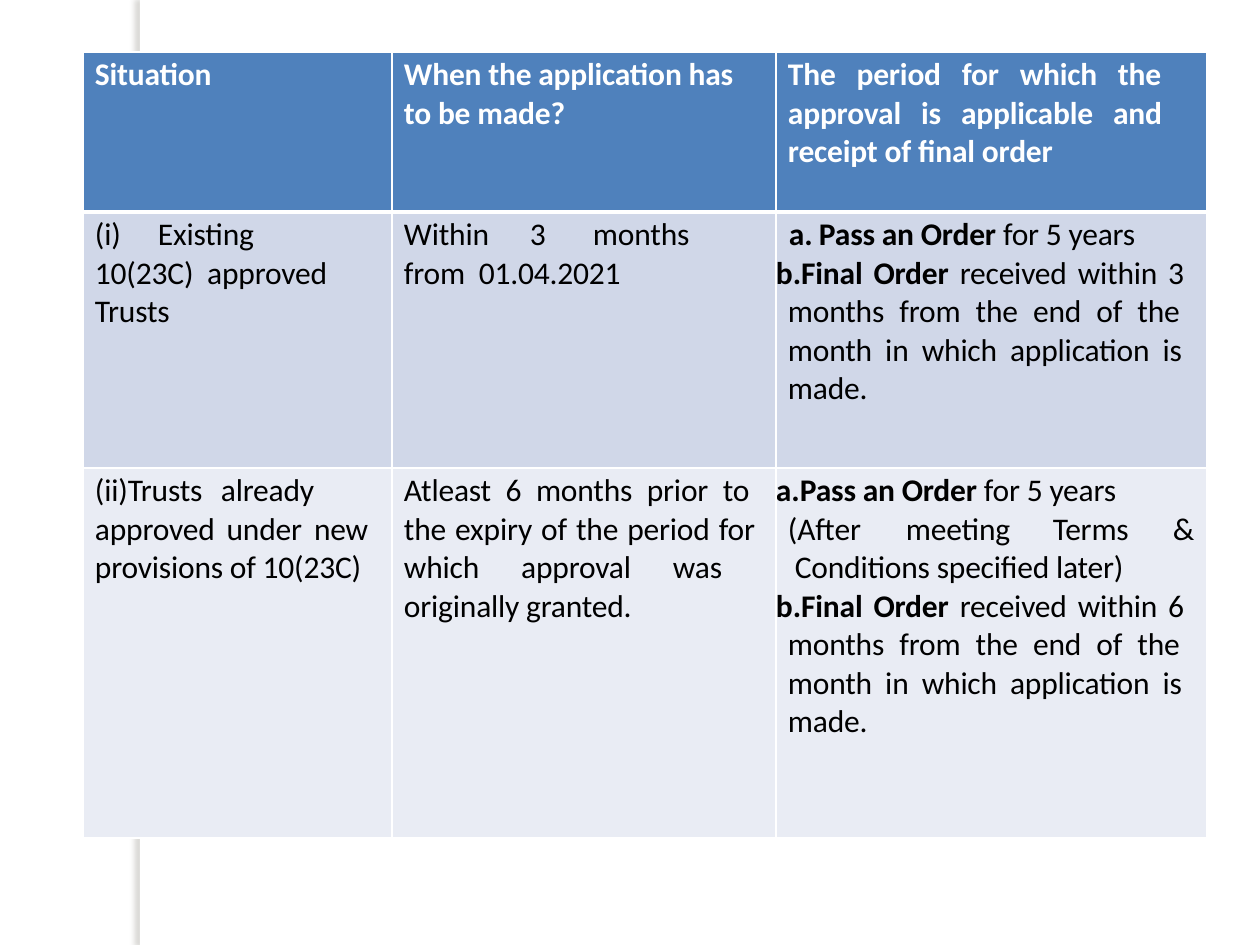
from dataclasses import dataclass

from lxml import etree
from pptx import Presentation
from pptx import util as u
from pptx.dml.color import RGBColor
from pptx.enum import shapes, text
from pptx.oxml import ns

EMU_PER_PX = 914400 / 126


def px(length):
    return u.Emu(round(length * EMU_PER_PX))


@dataclass(frozen=True)
class Theme:
    font: str = "Calibri"
    size: int = 18
    tracking: int = -10
    white: str = "FFFFFF"
    ink: str = "000000"
    shadow: str = "736F63"
    row_fills: tuple = ("4F81BC", "D0D7E8", "E9ECF4")
    thin: int = 1
    thick: int = 3


@dataclass(frozen=True)
class Line:
    """One cell paragraph; runs are (wording, bold), lengths are px."""
    runs: tuple
    justified: bool = False
    number: int = 0
    left: int = 12
    hang: int = 0
    right: int = 12
    tabs: tuple = ()


def child(parent, tag, **attributes):
    element = etree.SubElement(parent, ns.qn(tag))
    for name, value in attributes.items():
        element.set(name, str(value))
    return element


class SlideBuilder:
    def __init__(self, presentation, theme):
        self.theme = theme
        self.slide = presentation.slides.add_slide(presentation.slide_layouts[6])

    def band(self, left, top, width, height):
        """Add a white strip that casts a soft shadow to its left."""
        shape = self.slide.shapes.add_shape(
            shapes.MSO_SHAPE.RECTANGLE, px(left), px(top), px(width), px(height))
        shape.fill.solid()
        shape.fill.fore_color.rgb = RGBColor.from_string(self.theme.white)
        shape.line.fill.background()
        shape.shadow.inherit = False
        effects = shape._element.spPr.find(ns.qn("a:effectLst"))
        shadow = child(effects, "a:outerShdw", blurRad=u.Pt(3), dist=u.Pt(3),
                       dir=180 * 60000, algn="tl", rotWithShape=0)
        color = child(shadow, "a:srgbClr", val=self.theme.shadow)
        child(color, "a:alpha", val=25000)

    def table(self, left, top, columns, rows, content):
        frame = self.slide.shapes.add_table(
            len(rows), len(columns), px(left), px(top), px(sum(columns)), px(sum(rows)))
        table = frame.table
        table.first_row = table.horz_banding = False
        for column, width in zip(table.columns, columns):
            column.width = px(width)
        for index, (row, height) in enumerate(zip(table.rows, rows)):
            row.height = px(height)
            for cell, lines in zip(row.cells, content[index]):
                self.cell(cell, index, lines)

    def cell(self, cell, row, lines):
        theme = self.theme
        cell.margin_left = cell.margin_right = cell.margin_bottom = 0
        cell.margin_top = px(4)
        cell.fill.solid()
        cell.fill.fore_color.rgb = RGBColor.from_string(theme.row_fills[row])
        self.borders(cell, top=theme.thick if row == 1 else theme.thin,
                     bottom=theme.thick if row == 0 else theme.thin)
        frame = cell.text_frame
        for index, line in enumerate(lines):
            paragraph = frame.add_paragraph() if index else frame.paragraphs[0]
            paragraph.space_before = u.Pt(0 if index else 2.4)
            self.line(paragraph, line, theme.ink if row else theme.white)

    def borders(self, cell, top, bottom):
        properties = cell._tc.get_or_add_tcPr()
        edges = (("a:lnL", self.theme.thin), ("a:lnR", self.theme.thin),
                 ("a:lnT", top), ("a:lnB", bottom))
        for position, (tag, width) in enumerate(edges):
            border = child(properties, tag, w=u.Pt(width))
            child(child(border, "a:solidFill"), "a:srgbClr", val=self.theme.white)
            properties.insert(position, border)

    def line(self, paragraph, line, color):
        paragraph.alignment = (
            text.PP_ALIGN.JUSTIFY if line.justified else text.PP_ALIGN.LEFT)
        properties = paragraph._p.get_or_add_pPr()
        properties.set("marL", str(px(line.left)))
        properties.set("marR", str(px(line.right)))
        properties.set("indent", str(px(-line.hang)))
        if line.number:
            child(properties, "a:buAutoNum", type="alphaLcPeriod", startAt=line.number)
        else:
            child(properties, "a:buNone")
        if line.tabs:
            stops = child(properties, "a:tabLst")
            for stop in line.tabs:
                child(stops, "a:tab", pos=px(stop), algn="l")
        for wording, bold in line.runs:
            run = paragraph.add_run()
            run.text = wording
            run.font.name = self.theme.font
            run.font.size = u.Pt(self.theme.size)
            run.font.bold = bold
            run.font.color.rgb = RGBColor.from_string(color)
            run._r.get_or_add_rPr().set("spc", str(self.theme.tracking))


def heading(wording, **options):
    return Line(((wording, True),), **options)


def body(wording, **options):
    return Line(((wording, False),), **options)


def final_order(months):
    return Line((("Final Order ", True),
                 (f"received within {months}  months from the end of the  "
                  "month in which application is  made.", False)),
                justified=True, number=2, hang=12, tabs=(44,))


def pass_order(wording, **options):
    return Line((("Pass an Order ", True), (wording, False)), number=1, **options)


CONTENT = (
    ([heading("Situation")],
     [heading("When the application has"), heading("to be made?")],
     [heading("The period for which the  approval is applicable and  "
              "receipt of final order", justified=True, right=25)]),
    ([body("(i)\tExisting\t10(23C)  approved Trusts", tabs=(69, 197))],
     [body("Within\t3\tmonths\tfrom  01.04.2021", tabs=(131, 179, 310))],
     [pass_order("for 5 years", justified=True, left=43, hang=30, tabs=(43,)),
      final_order(3)]),
    ([body("(ii)Trusts\talready  approved under new  provisions of 10(23C)",
           justified=True, tabs=(202,))],
     [body("Atleast 6 months prior to  the expiry of the period for  "
           "which approval was  originally granted.", justified=True)],
     [pass_order("for 5 years  (After\tmeeting\tTerms\t&  "
                 "Conditions specified later)", hang=12, tabs=(43, 130, 277, 397)),
      final_order(6)]),
)


def main():
    presentation = Presentation()
    presentation.slide_width, presentation.slide_height = px(1260), px(945)
    builder = SlideBuilder(presentation, Theme())
    builder.band(140, 0, 10, 945)
    builder.table(83, 52, columns=(309, 384, 431), rows=(160, 256, 370),
                  content=CONTENT)
    presentation.save("out.pptx")


if __name__ == "__main__":
    main()
